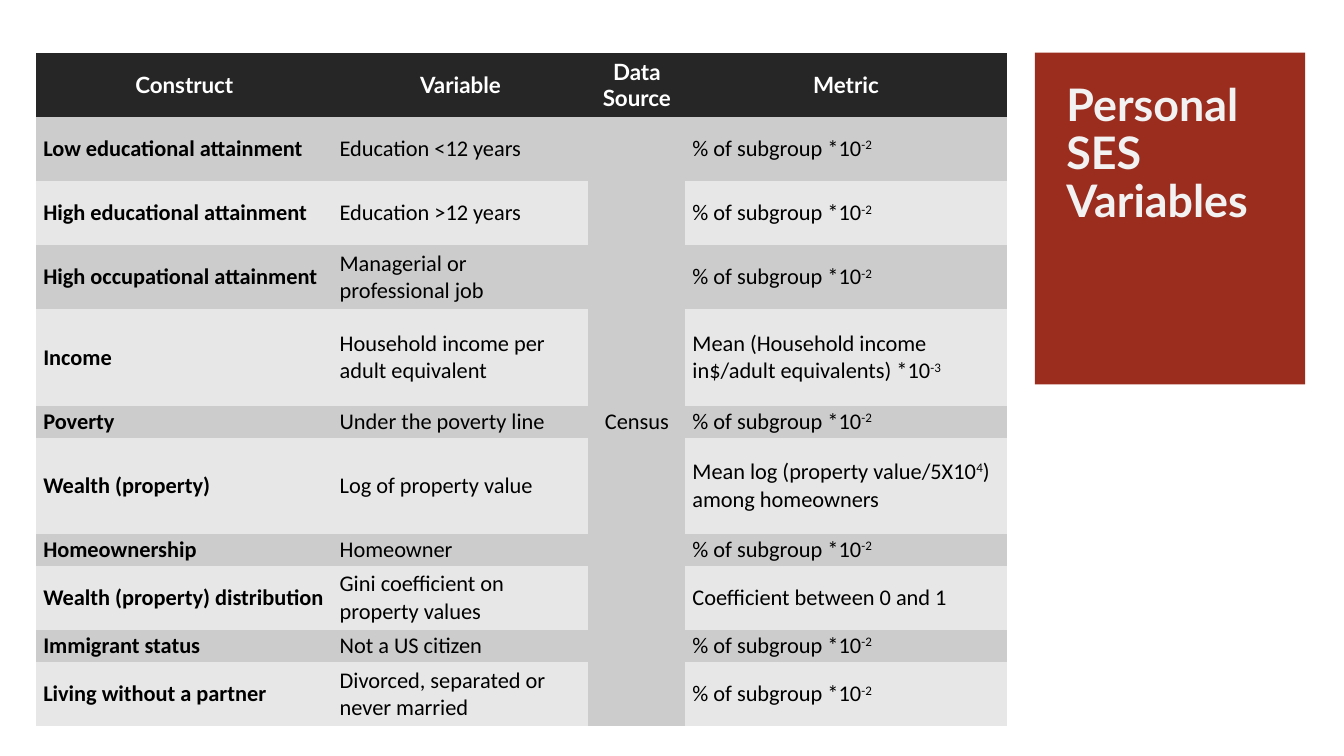
"""Build the slide of personal SES variables: a table beside a titled panel."""
from pptx import Presentation
from pptx.dml.color import RGBColor
from pptx.enum.shapes import MSO_SHAPE
from pptx.enum.text import MSO_ANCHOR, MSO_AUTO_SIZE, PP_ALIGN
from pptx.util import Cm, Pt

TITLE_LINES = ["Personal SES", "Variables"]
HEADINGS = ["Construct", "Variable", "Data Source", "Metric"]
SOURCE = "Census"
SHARE = "% of subgroup *10^-2"

# Row height in units, construct, variable, metric; ^ encloses a superscript.
VARIABLES = [
    (2, "Low educational attainment", "Education <12 years", SHARE),
    (2, "High educational attainment", "Education >12 years", SHARE),
    (2, "High occupational attainment", "Managerial or professional job", SHARE),
    (3, "Income", "Household income per adult equivalent",
     "Mean (Household income in$/adult equivalents) *10^-3"),
    (1, "Poverty", "Under the poverty line", SHARE),
    (3, "Wealth (property)", "Log of property value",
     "Mean log (property value/5X10^4^) among homeowners"),
    (1, "Homeownership", "Homeowner", SHARE),
    (2, "Wealth (property) distribution", "Gini coefficient on property values",
     "Coefficient between 0 and 1"),
    (1, "Immigrant status", "Not a US citizen", SHARE),
    (2, "Living without a partner", "Divorced, separated or never married", SHARE),
]
HEADING_UNITS = 2
COLUMN_WIDTHS = [7.47, 6.45, 2.44, 8.1]
TABLE_HEIGHT = 16.97
TOP = 1.33
SOURCE_COLUMN = 2
BAND_FILLS = ["CCCCCC", "E7E7E7"]
PLAIN_STYLE = "{2D5ABB26-0587-4C30-8999-92F81FD0307C}"


def color(hex_string):
    return RGBColor.from_string(hex_string)


def add_run(paragraph, text, font_name, size, hex_string, bold):
    run = paragraph.add_run()
    run.text = text
    run.font.name = font_name
    run.font.size = Pt(size)
    run.font.bold = bold
    run.font.color.rgb = color(hex_string)
    return run


def fill_cell(cell, hex_string):
    cell.fill.solid()
    cell.fill.fore_color.rgb = color(hex_string)


def write_cell(cell, text, font_name, hex_string, bold, align):
    cell.vertical_anchor = MSO_ANCHOR.MIDDLE
    cell.margin_left = cell.margin_right = Cm(0.18)
    cell.margin_top = cell.margin_bottom = 0
    paragraph = cell.text_frame.paragraphs[0]
    paragraph.alignment = align
    for index, part in enumerate(text.split("^")):
        run = add_run(paragraph, part, font_name, 16, hex_string, bold)
        if index % 2:
            run.font._element.set("baseline", "30000")


def add_variable_table(slide):
    row_units = [HEADING_UNITS] + [variable[0] for variable in VARIABLES]
    table = slide.shapes.add_table(
        len(row_units), len(HEADINGS), Cm(0.91), Cm(TOP),
        Cm(sum(COLUMN_WIDTHS)), Cm(TABLE_HEIGHT)).table
    table._tbl.tblPr[0].text = PLAIN_STYLE
    for column, width in zip(table.columns, COLUMN_WIDTHS):
        column.width = Cm(width)
    for row, units in zip(table.rows, row_units):
        row.height = Cm(TABLE_HEIGHT * units / sum(row_units))

    for column, heading in enumerate(HEADINGS):
        cell = table.cell(0, column)
        fill_cell(cell, "262626")
        write_cell(cell, heading, "Lato", "FFFFFF", True, PP_ALIGN.CENTER)

    for row, (_, construct, variable, metric) in enumerate(VARIABLES, 1):
        for column, text in ((0, construct), (1, variable), (3, metric)):
            cell = table.cell(row, column)
            fill_cell(cell, BAND_FILLS[(row - 1) % 2])
            write_cell(cell, text, "Calibri", "000000", column == 0, PP_ALIGN.LEFT)
        fill_cell(table.cell(row, SOURCE_COLUMN), BAND_FILLS[0])

    source_cell = table.cell(1, SOURCE_COLUMN)
    source_cell.merge(table.cell(len(VARIABLES), SOURCE_COLUMN))
    write_cell(source_cell, SOURCE, "Calibri", "000000", False, PP_ALIGN.CENTER)


def add_title_panel(slide):
    panel = slide.shapes.add_shape(
        MSO_SHAPE.RECTANGLE, Cm(26.08), Cm(TOP), Cm(6.81), Cm(8.36))
    panel.shadow.inherit = False
    panel.fill.solid()
    panel.fill.fore_color.rgb = color("9B2D1F")
    panel.line.fill.background()


def write_title(slide):
    title = slide.shapes.title
    title.left, title.top, title.width, title.height = (
        Cm(26.62), Cm(1.85), Cm(6.76), Cm(4.11))
    frame = title.text_frame
    frame.word_wrap = True
    frame.auto_size = MSO_AUTO_SIZE.NONE
    frame.vertical_anchor = MSO_ANCHOR.MIDDLE
    paragraph = frame.paragraphs[0]
    paragraph.alignment = PP_ALIGN.LEFT
    paragraph.line_spacing = 0.9
    for index, line in enumerate(TITLE_LINES):
        if index:
            paragraph.add_line_break()
        add_run(paragraph, line, "Lato", 32, "F2F2F2", True)
    slide.shapes._spTree.append(title._element)


def main():
    presentation = Presentation()
    presentation.slide_width = Cm(33.87)
    presentation.slide_height = Cm(19.05)
    slide = presentation.slides.add_slide(presentation.slide_layouts[5])
    add_title_panel(slide)
    add_variable_table(slide)
    write_title(slide)
    presentation.save("out.pptx")


if __name__ == "__main__":
    main()
